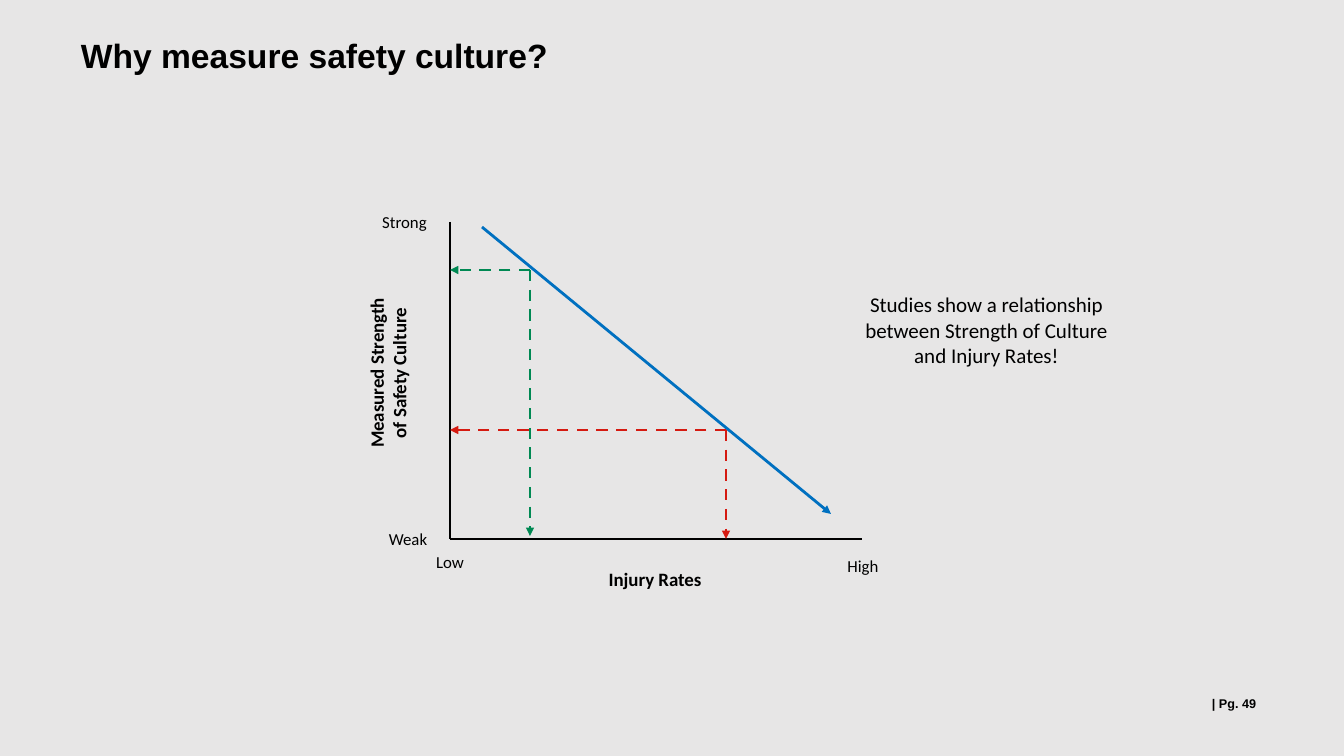
from lxml import etree
from pptx import Presentation
from pptx.dml.color import RGBColor
from pptx.enum.dml import MSO_LINE
from pptx.enum.shapes import MSO_CONNECTOR
from pptx.enum.text import MSO_ANCHOR, PP_ALIGN
from pptx.oxml.ns import qn
from pptx.util import Pt

STRAIGHT = MSO_CONNECTOR.STRAIGHT
DASH = MSO_LINE.DASH
TOP, MIDDLE = MSO_ANCHOR.TOP, MSO_ANCHOR.MIDDLE
LEFT, CENTER = PP_ALIGN.LEFT, PP_ALIGN.CENTER

PX = 914400 / 100.8
SLIDE_SIZE = (1344, 756)
COLORS = {
    "background": "E7E6E6",
    "ink": "000000",
    "trend": "0070C0",
    "strong": "008953",
    "weak": "D51A11",
}

TITLE = ("Why measure safety culture?", (71, 0, 1210, 116), 24)
PAGE = ("| Pg. 49", (1207, 683, 95, 40), 9)
FINDING = (
    "Studies show a relationship between Strength of Culture and Injury Rates!",
    (853, 287, 267, 87), 15,
)
AXIS_TITLES = [
    ("Measured Strength of Safety Culture", (300, 345, 176, 56), 270),
    ("Injury Rates", (567, 563, 176, 33), 0),
]
AXIS_ENDS = [
    ("Strong", (369, 207, 71, 30)),
    ("Weak", (376, 524, 64, 30)),
    ("Low", (418, 547, 64, 30)),
    ("High", (831, 551, 64, 30)),
]
ORIGIN = (450, 539)
AXIS_TOP, AXIS_RIGHT = 222, 862
TREND = ((482, 227), (831, 514))
READINGS = [("strong", (530, 270), 536), ("weak", (726, 430), 539)]


def emu(*lengths):
    return [round(length * PX) for length in lengths]


def rgb(name):
    return RGBColor.from_string(COLORS[name])


def add_text(slide, text, area, size, font="Calibri", bold=False,
             align=CENTER, anchor=TOP, rotation=0):
    box = slide.shapes.add_textbox(*emu(*area))
    box.rotation = rotation
    frame = box.text_frame
    frame.word_wrap = True
    frame.vertical_anchor = anchor
    frame.text = text
    paragraph = frame.paragraphs[0]
    paragraph.alignment = align
    run_font = paragraph.runs[0].font
    run_font.name, run_font.size, run_font.bold = font, Pt(size), bold
    run_font.color.rgb = rgb("ink")
    return frame


def add_line(slide, start, end, color, arrow=False, dashed=False):
    connector = slide.shapes.add_connector(STRAIGHT, *emu(*start, *end))
    connector.line.color.rgb = rgb(color)
    connector.line.width = Pt(2)
    if dashed:
        connector.line.dash_style = DASH
    if arrow:
        outline = connector.line._get_or_add_ln()
        etree.SubElement(outline, qn("a:tailEnd"), type="triangle")
    etree.SubElement(connector._element.spPr, qn("a:effectLst"))


def main():
    deck = Presentation()
    deck.slide_width, deck.slide_height = emu(*SLIDE_SIZE)
    slide = deck.slides.add_slide(deck.slide_layouts[6])
    slide.background.fill.solid()
    slide.background.fill.fore_color.rgb = rgb("background")

    title = add_text(slide, *TITLE, font="Arial", bold=True, align=LEFT, anchor=MIDDLE)
    title.paragraphs[0].line_spacing = 0.9
    page = add_text(slide, *PAGE, font="Arial", bold=True, align=LEFT, anchor=MIDDLE)
    page.margin_left = emu(5)[0]

    axis_x, axis_y = ORIGIN
    add_line(slide, (axis_x, AXIS_TOP), ORIGIN, "ink")
    add_line(slide, ORIGIN, (AXIS_RIGHT, axis_y), "ink")
    for text, area in AXIS_ENDS:
        add_text(slide, text, area, 12)
    for text, area, rotation in AXIS_TITLES:
        add_text(slide, text, area, 13.5, bold=True, rotation=rotation)

    add_line(slide, *TREND, "trend", arrow=True)
    for color, (x, y), drop_end in READINGS:
        add_line(slide, (x, y), (x, drop_end), color, arrow=True, dashed=True)
        add_line(slide, (x, y), (axis_x, y), color, arrow=True, dashed=True)
    add_text(slide, *FINDING)

    deck.save("out.pptx")


if __name__ == "__main__":
    main()
